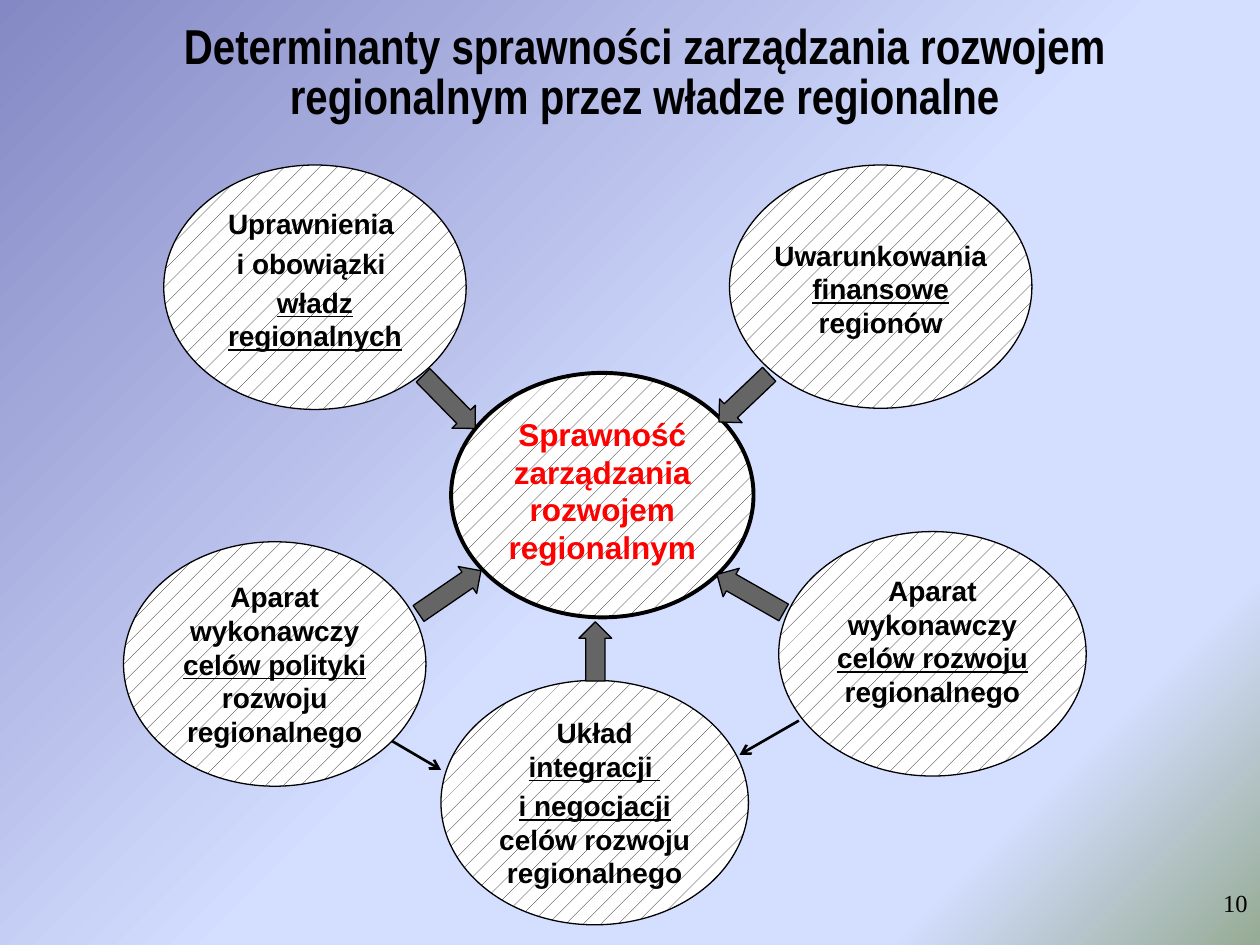
from lxml.etree import SubElement
from pptx import Presentation
from pptx.dml.color import RGBColor
from pptx.enum.dml import MSO_PATTERN
from pptx.enum.shapes import MSO_CONNECTOR, MSO_SHAPE
from pptx.enum.text import MSO_ANCHOR as Anchor, PP_ALIGN as Align
from pptx.oxml.ns import qn
from pptx.util import Pt

BLACK, WHITE, RED, GREY = "000000", "FFFFFF", "FF0000", "656565"
BACKDROP = [(0, "8488C4"), (53, "D4DEFF"), (83, "D4DEFF"), (100, "96AB94")]

FACTORS = [
    ((416.9, 94.3, 172.8, 139), (405.4, 218.2, 39.6, 18.7), 316.5, Anchor.MIDDLE,
     [[("Uwarunkowania ", False), ("finansowe", True), (" regionów", False)]]),
    ((93.6, 94.3, 172.8, 139.7), (235.4, 220.3, 42.5, 18.7), 225.6, Anchor.TOP,
     [[("Uprawnienia ", False)], [("i obowiązki ", False)], [("władz regionalnych", True)]]),
    ((70.6, 309.6, 172.8, 139.7), (235.4, 329, 43.2, 18.7), 145.6, Anchor.MIDDLE,
     [[("Aparat wykonawczy ", False), ("celów polityki ", True), ("rozwoju regionalnego", False)]]),
    ((445, 303.8, 175.7, 139.7), (406.8, 329.8, 43.9, 18.7), 29.7, Anchor.TOP,
     [[("Aparat wykonawczy ", False), ("celów rozwoju ", True), ("regionalnego", False)]]),
    ((252, 388.8, 175.7, 139.7), (323.3, 362.9, 33.8, 18.7), 90, Anchor.MIDDLE,
     [[("Układ ", False), ("integracji ", True)],
      [("i negocjacji ", True), ("celów rozwoju regionalnego", False)]]),
]
LINKS = [((456.5, 411.8), (422.6, 431.3)), ((223.9, 423.4), (252, 439.9))]


def color(value):
    """Turn a hex string into a colour."""
    return RGBColor.from_string(value)


def points(values):
    """Turn numbers into lengths in points."""
    return [Pt(value) for value in values]


def add_span(para, text, size, font="Arial", ink=BLACK, bold=True, underline=False):
    """Append one formatted run to a paragraph."""
    span = para.add_run()
    span.text = text
    span.font.name, span.font.size = font, Pt(size)
    span.font.bold, span.font.underline = bold, underline
    span.font.color.rgb = color(ink)


def paint_background(page, stops):
    """Give the page a diagonal gradient."""
    fill = page.background.fill
    fill.gradient()
    fill.gradient_angle = 315
    stop_list = next(page.element.iter(qn("a:gsLst")))
    for old_stop in list(stop_list):
        stop_list.remove(old_stop)
    for position, value in stops:
        stop = SubElement(stop_list, qn("a:gs"), pos=str(position * 1000))
        SubElement(stop, qn("a:srgbClr"), val=value)


def add_title(page, box, text):
    """Place and format the title placeholder."""
    title = page.shapes.title
    title.left, title.top, title.width, title.height = points(box)
    frame = title.text_frame
    frame.word_wrap, frame.vertical_anchor = True, Anchor.BOTTOM
    para = frame.paragraphs[0]
    para.alignment, para.line_spacing = Align.CENTER, 0.85
    add_span(para, text, 28, "Arial Narrow")


def add_page_number(page, box, text):
    """Place the page number at the right of its box."""
    frame = page.shapes.add_textbox(*points(box)).text_frame
    frame.word_wrap = True
    para = frame.paragraphs[0]
    para.alignment = Align.RIGHT
    add_span(para, text, 14, "Times New Roman", bold=False)


def add_outlined(page, kind, box, line_width):
    """Add a preset shape with a black outline and no shadow."""
    shape = page.shapes.add_shape(kind, *points(box))
    shape.shadow.inherit = False
    shape.line.color.rgb, shape.line.width = color(BLACK), Pt(line_width)
    return shape


def add_bubble(page, box, paragraphs, anchor, size=16, ink=BLACK, line_width=0.75):
    """Add a patterned ellipse with centred text."""
    bubble = add_outlined(page, MSO_SHAPE.OVAL, box, line_width)
    bubble.fill.patterned()
    bubble.fill.pattern = MSO_PATTERN.PERCENT_5
    bubble.fill.fore_color.rgb, bubble.fill.back_color.rgb = color(BLACK), color(WHITE)
    frame = bubble.text_frame
    frame.word_wrap, frame.vertical_anchor = True, anchor
    for index, spans in enumerate(paragraphs):
        para = frame.add_paragraph() if index else frame.paragraphs[0]
        para.alignment, para.space_before = Align.CENTER, Pt(0.2 * size)
        for text, underline in spans:
            add_span(para, text, size, ink=ink, underline=underline)
    return bubble


def add_block_arrow(page, box, rotation):
    """Add a grey arrow turned towards the centre."""
    arrow = add_outlined(page, MSO_SHAPE.LEFT_ARROW, box, 0.75)
    arrow.adjustments[0], arrow.adjustments[1] = 0.586, 0.5
    arrow.rotation = rotation
    arrow.fill.solid()
    arrow.fill.fore_color.rgb = color(GREY)


def add_link(page, start, end):
    """Add a thin line with an open arrowhead at its end."""
    link = page.shapes.add_connector(MSO_CONNECTOR.STRAIGHT, *points(start + end))
    link.line.color.rgb, link.line.width = color(BLACK), Pt(1.5)
    SubElement(link.line._get_or_add_ln(), qn("a:tailEnd"), type="arrow")
    SubElement(link.element.spPr, qn("a:effectLst"))


def add_diagram(page):
    """Draw the central goal, its factors and the links between them."""
    goal = [[("Sprawność zarządzania rozwojem regionalnym", False)]]
    add_bubble(page, (257.8, 213.1, 172.8, 139.7), goal, Anchor.TOP, 18, RED, 2.25)
    for number, (box, arrow_box, rotation, anchor, paragraphs) in enumerate(FACTORS):
        bubble = add_bubble(page, box, paragraphs, anchor)
        if number == 0:
            frame = bubble.text_frame
            frame.margin_left = frame.margin_right = 0
            frame.margin_top = Pt(5.8)
            frame.paragraphs[0].space_before = 0
        add_block_arrow(page, arrow_box, rotation)
    for start, end in LINKS:
        add_link(page, start, end)


def main():
    """Build the deck and save it."""
    deck = Presentation()
    deck.slide_width, deck.slide_height = Pt(720), Pt(540)
    page = deck.slides.add_slide(deck.slide_layouts[5])
    paint_background(page, BACKDROP)
    add_title(page, (36.7, 9.4, 663.1, 65.5),
              "Determinanty sprawności zarządzania rozwojem regionalnym przez władze regionalne")
    add_page_number(page, (570.2, 504, 149.8, 36), "10")
    add_diagram(page)
    deck.save("out.pptx")


if __name__ == "__main__":
    main()
